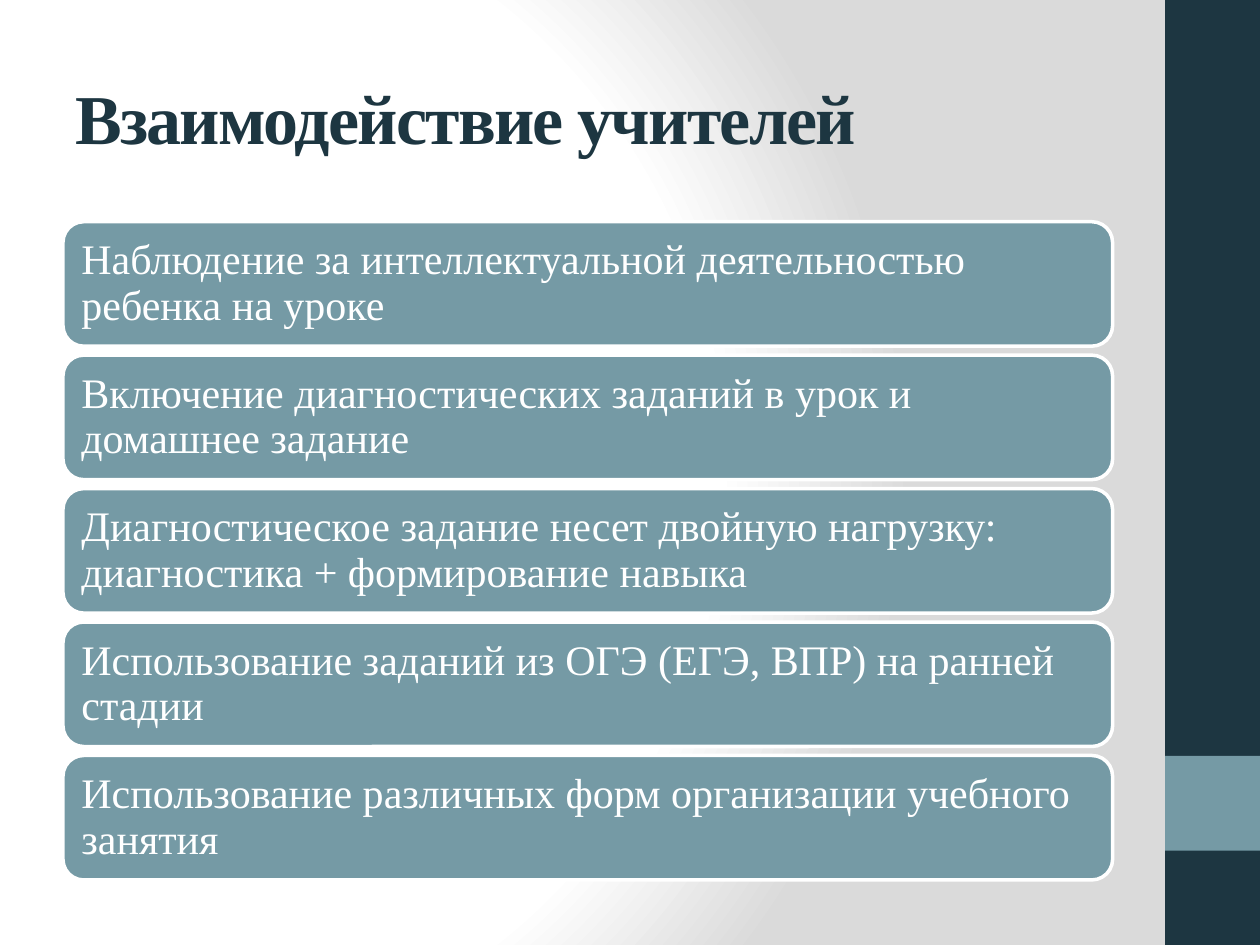
"""Build the slide on how teachers work together: a title, five cards and a side band."""
from dataclasses import dataclass

from lxml.etree import SubElement
from pptx import Presentation
from pptx.dml.color import RGBColor
from pptx.enum.shapes import MSO_SHAPE as Preset
from pptx.enum.text import MSO_ANCHOR as Anchor, PP_ALIGN as Align
from pptx.oxml.ns import qn
from pptx.util import Cm, Pt

FONT = "Times New Roman"
DARK, TEAL, WHITE, GREY = "1D3641", "759AA5", "FFFFFF", "DADADA"
LEFT, WIDTH = 1.27, 21.16
CARD_TOP, CARD_HEIGHT, CARD_STEP = 4.47, 2.51, 2.69
CARDS = (
    "Наблюдение за интеллектуальной деятельностью ребенка на уроке",
    "Включение диагностических заданий в урок и домашнее задание",
    "Диагностическое задание несет двойную нагрузку: диагностика + формирование навыка",
    "Использование заданий из ОГЭ (ЕГЭ, ВПР) на ранней стадии",
    "Использование различных форм организации учебного занятия",
)


@dataclass(frozen=True)
class Area:
    left: float
    top: float
    width: float
    height: float

    def lengths(self) -> tuple:
        return tuple(Cm(n) for n in (self.left, self.top, self.width, self.height))


def colour(value: str) -> RGBColor:
    return RGBColor.from_string(value)


def paint_background(page) -> None:
    page.background.fill.gradient()
    gradient = page.element.find(".//" + qn("a:gradFill"))
    for child in list(gradient):
        gradient.remove(child)
    stops = SubElement(gradient, qn("a:gsLst"))
    for position, value in ((0, WHITE), (75, WHITE), (100, GREY)):
        stop = SubElement(stops, qn("a:gs"), pos=str(position * 1000))
        SubElement(stop, qn("a:srgbClr"), val=value)
    circle = SubElement(gradient, qn("a:path"), path="circle")
    SubElement(circle, qn("a:fillToRect"), l="20000", t="50000", r="100000", b="50000")


def add_box(page, preset, area: Area, fill: str, line: str | None = None):
    box = page.shapes.add_shape(preset, *area.lengths())
    box.shadow.inherit = False
    box.fill.solid()
    box.fill.fore_color.rgb = colour(fill)
    if line:
        box.line.color.rgb = colour(line)
        box.line.width = Pt(2)
    else:
        box.line.fill.background()
    return box


def write(box, text: str, *, size: float, ink: str, bold: bool = False,
          line_spacing: float = 1.0, tracking: float = 0, inset: float = 0.25) -> None:
    frame = box.text_frame
    frame.word_wrap = True
    frame.vertical_anchor = Anchor.MIDDLE
    frame.margin_left = frame.margin_right = Cm(inset)
    frame.margin_top = frame.margin_bottom = Cm(inset)
    para = frame.paragraphs[0]
    para.alignment = Align.LEFT
    para.line_spacing = line_spacing
    span = para.add_run()
    span.text = text
    span.font.name = FONT
    span.font.size = Pt(size)
    span.font.bold = bold
    span.font.color.rgb = colour(ink)
    if tracking:
        span.font._element.set("spc", str(round(tracking * 100)))


def main() -> None:
    deck = Presentation()
    deck.slide_width, deck.slide_height = Cm(25.4), Cm(19.05)
    page = deck.slides.add_slide(deck.slide_layouts[6])
    paint_background(page)

    add_box(page, Preset.RECTANGLE, Area(23.49, 0, 1.91, 19.05), DARK)
    add_box(page, Preset.RECTANGLE, Area(23.49, 15.24, 1.91, 1.91), TEAL)

    title = page.shapes.add_textbox(*Area(LEFT, 0.76, WIDTH, 3.18).lengths())
    write(title, "Взаимодействие учителей", size=40, ink=DARK, bold=True, tracking=-1)

    for index, text in enumerate(CARDS):
        area = Area(LEFT, CARD_TOP + index * CARD_STEP, WIDTH, CARD_HEIGHT)
        card = add_box(page, Preset.ROUNDED_RECTANGLE, area, TEAL, WHITE)
        write(card, text, size=24, ink=WHITE, line_spacing=0.9)

    deck.save("out.pptx")


if __name__ == "__main__":
    main()
